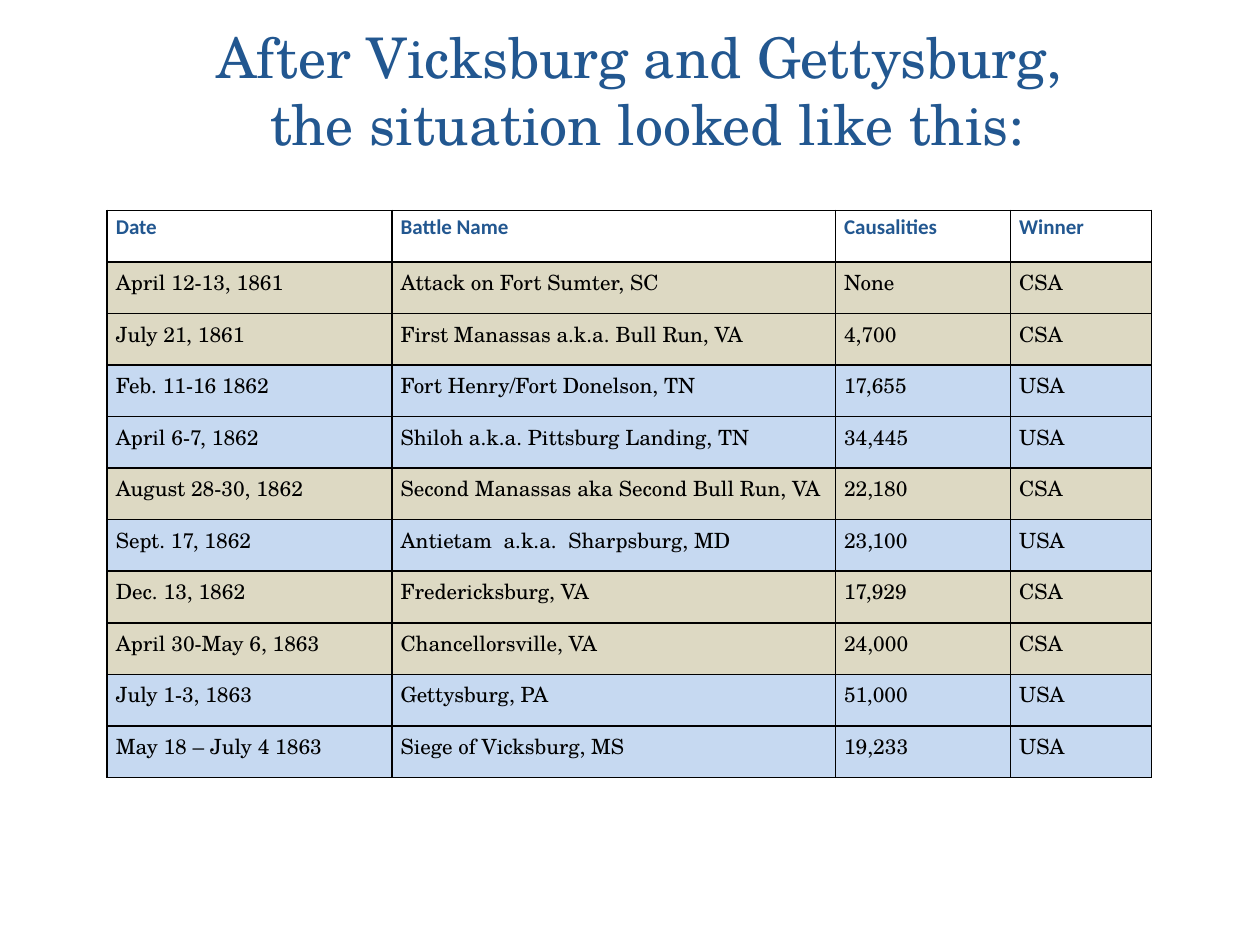
from lxml import etree
from pptx import Presentation
from pptx.dml.color import RGBColor
from pptx.enum.text import MSO_ANCHOR, PP_ALIGN
from pptx.oxml.ns import qn
from pptx.util import Inches, Pt

CENTER, MIDDLE = PP_ALIGN.CENTER, MSO_ANCHOR.MIDDLE
TITLE_ONLY = 5

COLORS = {"blue": "225790", "text": "000000", "line": "000000",
          "CSA": "DDD9C3", "USA": "C6D9F1"}
SERIF = "TeX Gyre Schola"
FONTS = {
    "title": {"name": SERIF, "size": Pt(32), "bold": False},
    "head": {"name": "Calibri", "size": Pt(12), "bold": True},
    "body": {"name": SERIF, "size": Pt(12), "bold": False},
}
MARGINS = {"margin_left": Inches(0.07), "margin_right": Inches(0.07),
           "margin_top": 0, "margin_bottom": 0}

TITLE = "After Vicksburg and Gettysburg, \vthe situation looked like this:"
WIDTHS = [2.26, 3.52, 1.39, 1.12]
HEAD = ("Date", "Battle Name", "Causalities", "Winner")
BATTLES = [
    ("April 12-13, 1861", "Attack on Fort Sumter, SC", "None", "CSA"),
    ("July 21, 1861", "First Manassas a.k.a. Bull Run, VA", "4,700", "CSA"),
    ("Feb. 11-16 1862", "Fort Henry/Fort Donelson, TN", "17,655", "USA"),
    ("April 6-7, 1862", "Shiloh a.k.a. Pittsburg Landing, TN", "34,445", "USA"),
    ("August 28-30, 1862", "Second Manassas aka Second Bull Run, VA", "22,180", "CSA"),
    ("Sept. 17, 1862", "Antietam  a.k.a.  Sharpsburg, MD", "23,100", "USA"),
    ("Dec. 13, 1862", "Fredericksburg, VA", "17,929", "CSA"),
    ("April 30-May 6, 1863", "Chancellorsville, VA", "24,000", "CSA"),
    ("July 1-3, 1863", "Gettysburg, PA", "51,000", "USA"),
    ("May 18 – July 4 1863", "Siege of Vicksburg, MS", "19,233", "USA"),
]


def apply(target, values):
    for name, value in values.items():
        setattr(target, name, value)


def style(par, kind, color):
    for run in par.runs:
        apply(run.font, FONTS[kind])
        run.font.color.rgb = RGBColor.from_string(COLORS[color])


def add_borders(cell):
    props = cell._tc.get_or_add_tcPr()
    for side in ("lnL", "lnR", "lnT", "lnB"):
        line = etree.SubElement(props, qn(f"a:{side}"), w=str(Pt(1)))
        fill = etree.SubElement(line, qn("a:solidFill"))
        etree.SubElement(fill, qn("a:srgbClr"), val=COLORS["line"])


def fill_cell(cell, text, kind, color, shade):
    apply(cell, MARGINS)
    cell.text = text
    par = cell.text_frame.paragraphs[0]
    par.line_spacing = 1.15
    style(par, kind, color)
    add_borders(cell)
    if shade:
        cell.fill.solid()
        cell.fill.fore_color.rgb = RGBColor.from_string(COLORS[shade])
    else:
        cell.fill.background()


def add_title(slide, left, top, width, height):
    title = slide.shapes.title
    apply(title, {"left": left, "top": top, "width": width, "height": height})
    frame = title.text_frame
    frame.text = TITLE
    apply(frame, {"vertical_anchor": MIDDLE, "word_wrap": True})
    par = frame.paragraphs[0]
    par.alignment = CENTER
    style(par, "title", "blue")


def add_battles(slide, left, top, width, height):
    rows = [HEAD] + BATTLES
    table = slide.shapes.add_table(
        len(rows), len(HEAD), left, top, width, height).table
    apply(table, {"first_row": False, "horz_banding": False})
    for col, share in zip(table.columns, WIDTHS):
        col.width = int(width * share / sum(WIDTHS))
    for r, row in enumerate(rows):
        # Each battle takes the shade of its winner
        look = ("body", "text", row[-1]) if r else ("head", "blue", None)
        for c, text in enumerate(row):
            fill_cell(table.cell(r, c), text, *look)


def main():
    deck = Presentation()
    deck.slide_width, deck.slide_height = Inches(10), Inches(7.5)
    slide = deck.slides.add_slide(deck.slide_layouts[TITLE_ONLY])
    # Title
    add_title(slide, Inches(0.25), Inches(0.25), Inches(9.78), Inches(0.92))
    # Table of battles
    add_battles(slide, Inches(0.85), Inches(1.67), Inches(8.29), Inches(4.5))
    deck.save("out.pptx")


if __name__ == "__main__":
    main()
